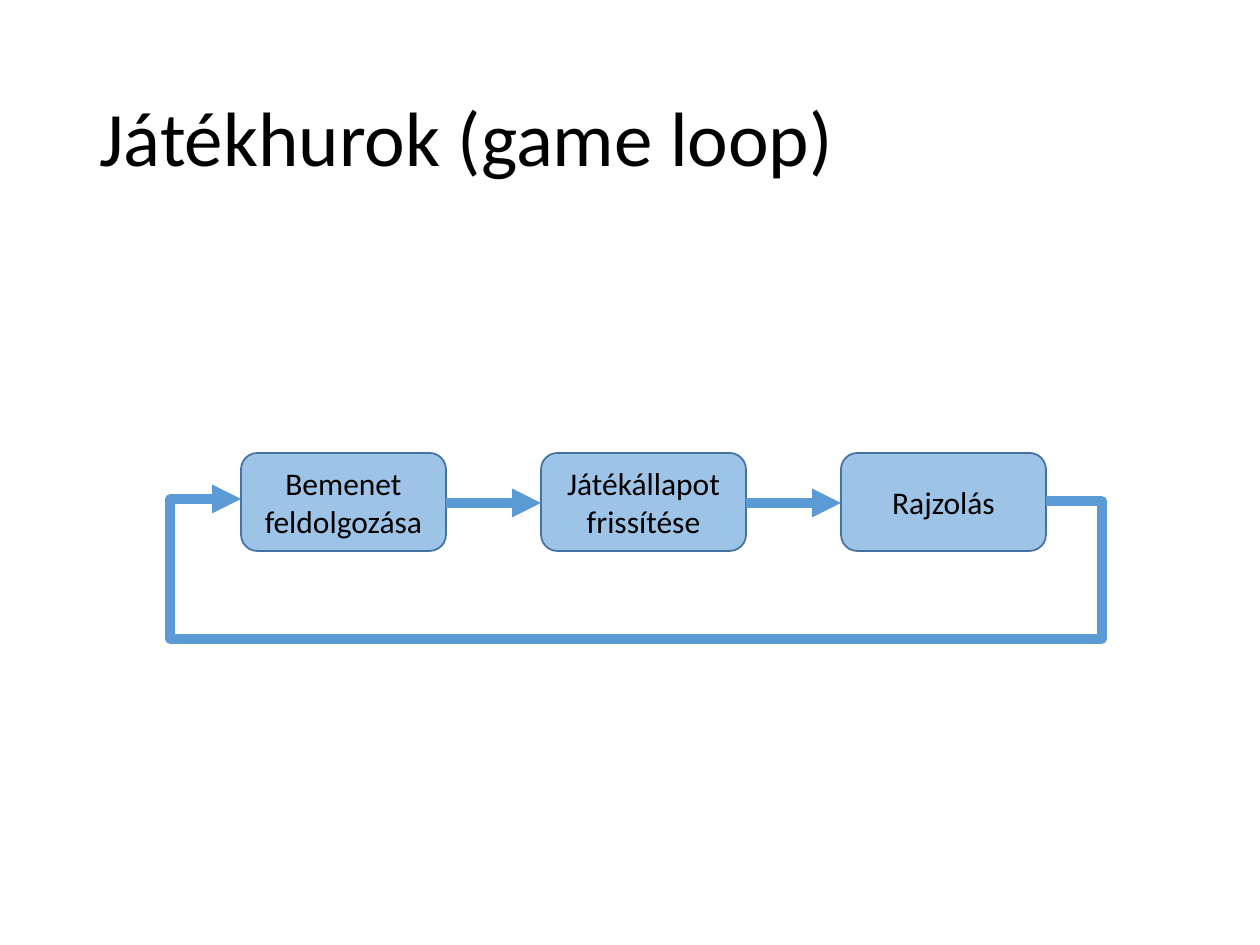
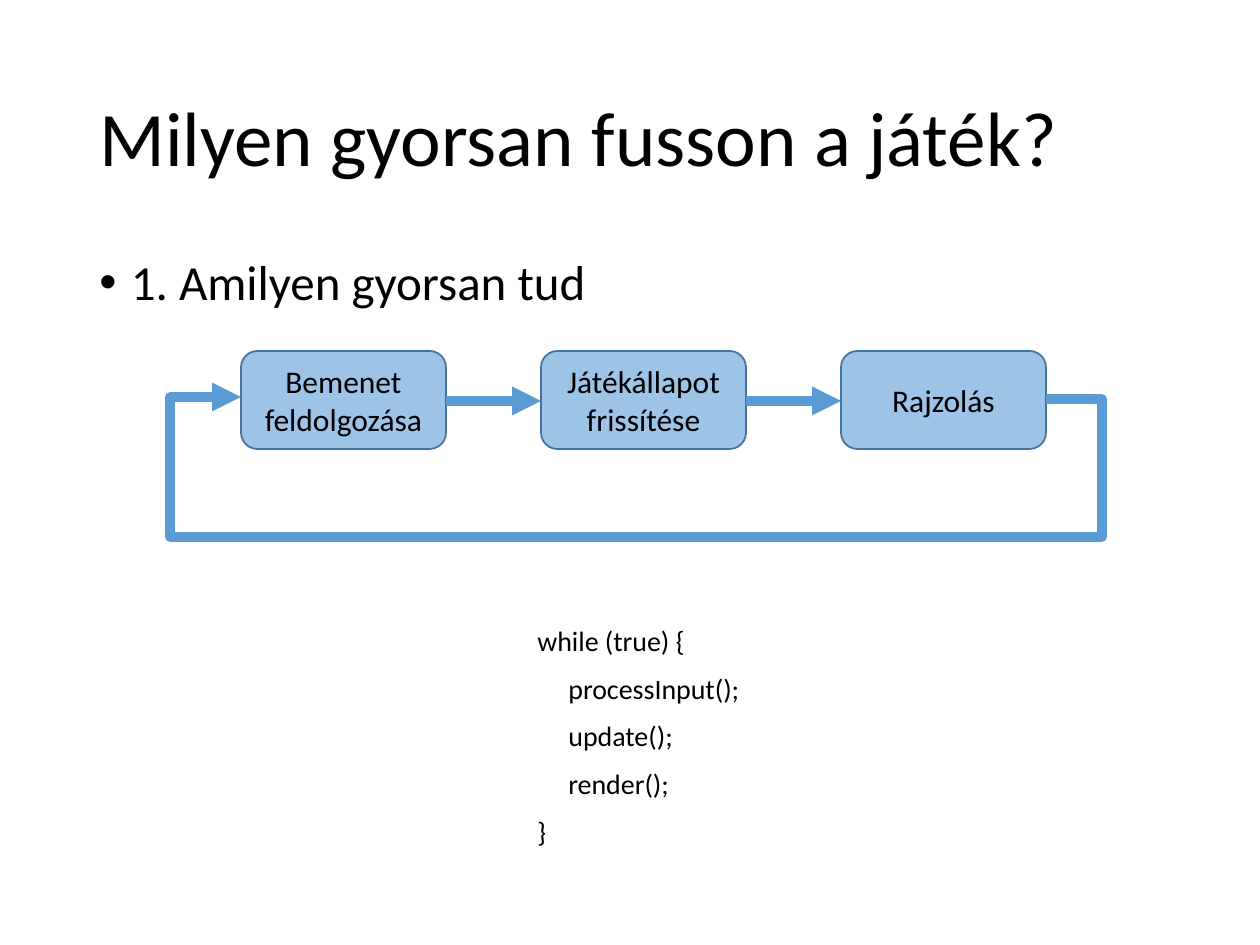
"""Builds two slides about the game loop and how fast it should run."""
from dataclasses import dataclass

from lxml.etree import SubElement
from pptx import Presentation
from pptx.dml.color import RGBColor
from pptx.enum.shapes import MSO_CONNECTOR, MSO_SHAPE
from pptx.enum.text import MSO_ANCHOR, PP_ALIGN
from pptx.oxml.ns import qn
from pptx.util import Pt

PX = 914400 / 126


@dataclass(frozen=True)
class Theme:
    font: str = "Calibri"
    text: RGBColor = RGBColor(0, 0, 0)
    box: RGBColor = RGBColor(0x9D, 0xC3, 0xE6)
    border: RGBColor = RGBColor(0x43, 0x73, 0x9E)
    arrow: RGBColor = RGBColor(0x5B, 0x9B, 0xD5)
    title: Pt = Pt(44)
    body: Pt = Pt(28)
    label: Pt = Pt(18)
    code: Pt = Pt(16)
    border_width: Pt = Pt(1)
    arrow_width: Pt = Pt(5.5)


T = Theme()
TIGHT = {"line_spacing": 0.9}
SPACED = {"line_spacing": 0.9, "space_before": Pt(10)}
CENTERED = {"alignment": PP_ALIGN.CENTER}


def emu(*lengths):
    return [round(n * PX) for n in lengths]


def write(sp, lines, size, fmt, anchor=MSO_ANCHOR.TOP):
    tf = sp.text_frame
    tf.word_wrap = True
    tf.vertical_anchor = anchor
    for i, line in enumerate(lines):
        p = tf.add_paragraph() if i else tf.paragraphs[0]
        for name, value in fmt.items():
            setattr(p, name, value)
        r = p.add_run()
        r.text = line
        r.font.name, r.font.size, r.font.color.rgb = T.font, size, T.text
    return tf.paragraphs


prs = Presentation()
prs.slide_width, prs.slide_height = emu(1260, 945)

STEPS = ["Bemenet feldolgozása", "Játékállapot frissítése", "Rajzolás"]
BOX_X, BOX_W, BOX_H, BOX_STEP = 241, 205, 98, 300
LOOP_LEFT, LOOP_RIGHT, LOOP_DROP = 170, 1102, 186
IN_DROP, MID_DROP, OUT_DROP = 46, 50, 48

slides = []
for title, top in [("Játékhurok (game loop)", 453), ("Milyen gyorsan fusson a játék?", 351)]:
    s = prs.slides.add_slide(prs.slide_layouts[6])
    slides.append(s)
    write(s.shapes.add_textbox(*emu(87, 50, 1086, 183)), [title], T.title, TIGHT, MSO_ANCHOR.MIDDLE)

    boxes = [BOX_X + i * BOX_STEP for i in range(len(STEPS))]
    for x, step in zip(boxes, STEPS):
        sp = s.shapes.add_shape(MSO_SHAPE.ROUNDED_RECTANGLE, *emu(x, top, BOX_W, BOX_H))
        sp.shadow.inherit = False
        sp.fill.solid()
        sp.fill.fore_color.rgb = T.box
        sp.line.color.rgb, sp.line.width = T.border, T.border_width
        write(sp, [step], T.label, CENTERED, MSO_ANCHOR.MIDDLE)

    enter, middle, leave, bottom = (top + d for d in (IN_DROP, MID_DROP, OUT_DROP, LOOP_DROP))
    links = [(x + BOX_W, middle, x + BOX_STEP, middle, True) for x in boxes[:-1]]
    links += [
        (boxes[-1] + BOX_W, leave, LOOP_RIGHT, leave, False),
        (LOOP_LEFT, bottom, LOOP_RIGHT, bottom, False),
        (LOOP_RIGHT, leave, LOOP_RIGHT, bottom, False),
        (LOOP_LEFT, enter, BOX_X, enter, True),
        (LOOP_LEFT, enter, LOOP_LEFT, bottom, False),
    ]
    for x1, y1, x2, y2, arrow in links:
        sp = s.shapes.add_connector(MSO_CONNECTOR.STRAIGHT, *emu(x1, y1, x2, y2))
        sp.line.color.rgb, sp.line.width = T.arrow, T.arrow_width
        ln = sp.line._get_or_add_ln()
        if x1 == x2:
            ln.set("cap", "rnd")
        if arrow:
            SubElement(ln, qn("a:tailEnd"), type="triangle")
        SubElement(sp._element.spPr, qn("a:effectLst"))

s = slides[1]
body = write(s.shapes.add_textbox(*emu(87, 252, 1086, 600)), ["1. Amilyen gyorsan tud"], T.body, SPACED)
pPr = body[0]._p.get_or_add_pPr()
pPr.set("marL", "228600")
pPr.set("indent", "-228600")
SubElement(pPr, qn("a:buFont"), typeface="Arial")
SubElement(pPr, qn("a:buChar"), char="•")

CODE = ["while (true) {", "processInput();", "update();", "render();", "}"]
code = write(s.shapes.add_textbox(*emu(525, 621, 347, 249)), CODE, T.code, SPACED)
for p in code[1:-1]:
    p._p.get_or_add_pPr().set("marL", str(emu(31)[0]))

prs.save("out.pptx")
